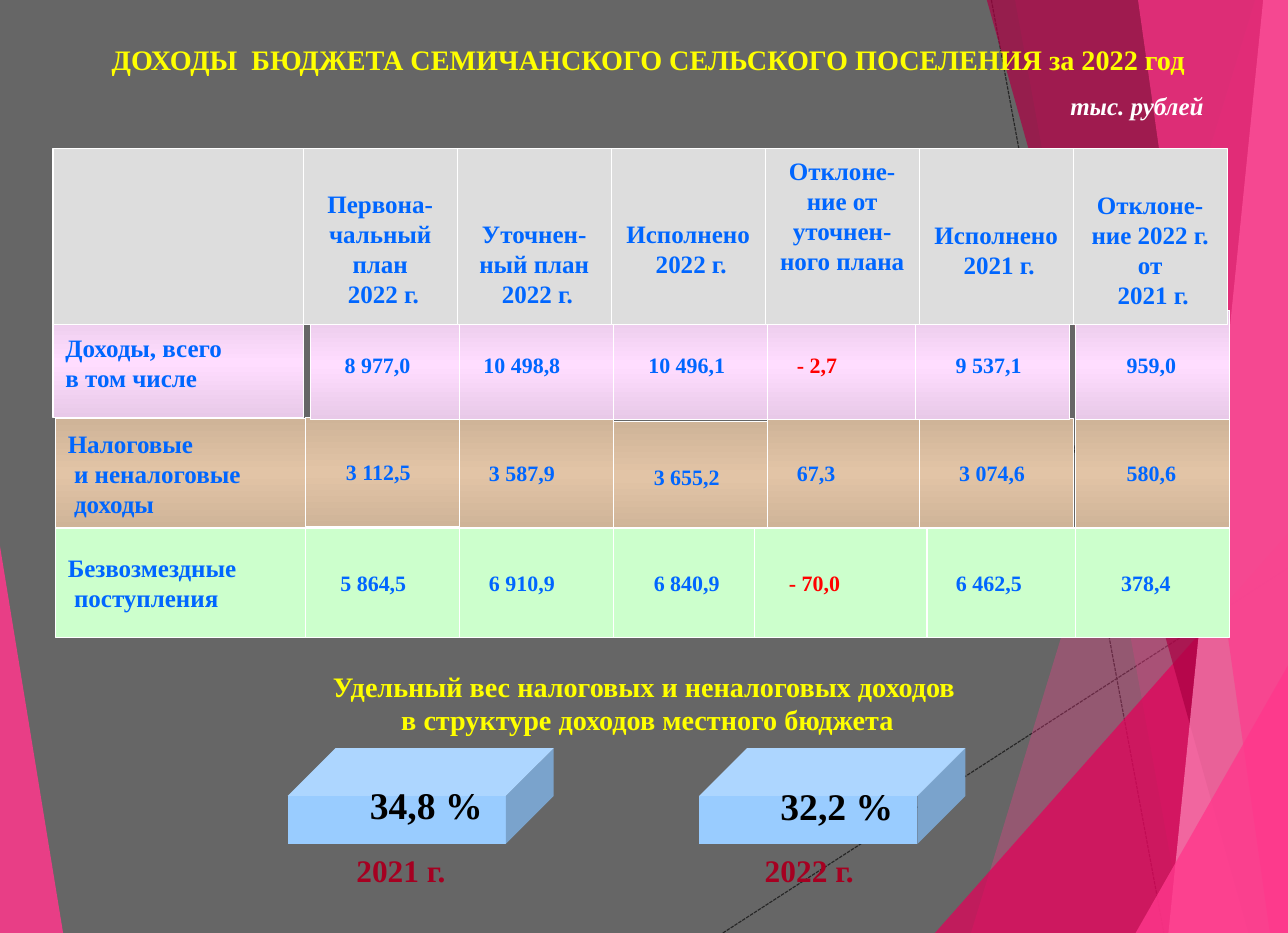
from copy import deepcopy

from pptx import Presentation
from pptx.dml.color import RGBColor
from pptx.enum.dml import MSO_LINE_DASH_STYLE as Dash
from pptx.enum.shapes import MSO_CONNECTOR as Connector, MSO_SHAPE as Shape
from pptx.enum.text import MSO_ANCHOR as Anchor, PP_ALIGN as Align
from pptx.oxml.ns import qn
from pptx.oxml.xmlchemy import OxmlElement
from pptx.util import Pt

rgb = RGBColor.from_string
WIDTH, HEIGHT = 822.24, 595.44
BLUE, RED, YELLOW, WHITE = "0066FF", "FF0000", "FFFF00", "FFFFFF"


def write(box, paragraphs, size, color, align=Align.CENTER, anchor=Anchor.TOP,
          margins=(8, 4.3, 8, 4.3), italic=False, shadow=False):
    """Fill a shape with bold text; "\n" inside a paragraph is a line break."""
    frame = box.text_frame
    frame.word_wrap = True
    frame.vertical_anchor = anchor
    (frame.margin_left, frame.margin_top,
     frame.margin_right, frame.margin_bottom) = [Pt(m) for m in margins]
    for number, text in enumerate(paragraphs):
        para = frame.paragraphs[0] if number == 0 else frame.add_paragraph()
        para.alignment = align
        for row, line in enumerate(text.split("\n")):
            if row:
                para.add_line_break()
            span = para.add_run()
            span.text = line
            font = span.font
            font.name, font.size = "Times New Roman", Pt(size)
            font.bold, font.italic = True, italic
            font.color.rgb = rgb(color)
            if shadow:
                effects = OxmlElement("a:effectLst")
                outer = OxmlElement("a:outerShdw")
                outer.set("dist", "17961")
                outer.set("dir", "2700000")
                tint = OxmlElement("a:srgbClr")
                tint.set("val", "C0C0C0")
                outer.append(tint)
                effects.append(outer)
                span._r.rPr.find(qn("a:solidFill")).addnext(effects)


def add_cell(left, top, width, height, colors):
    """Add a white-edged rectangle with a plain or a three-stop fill."""
    cell = slide.shapes.add_shape(Shape.RECTANGLE, Pt(left), Pt(top), Pt(width), Pt(height))
    cell.shadow.inherit = False
    cell.line.color.rgb = rgb(WHITE)
    cell.line.width = Pt(0.75)
    if len(colors) == 1:
        cell.fill.solid()
        cell.fill.fore_color.rgb = rgb(colors[0])
    else:
        cell.fill.gradient()
        cell.fill.gradient_angle = 90
        stop_list = cell._element.spPr.find(qn("a:gradFill")).find(qn("a:gsLst"))
        stop_list.append(deepcopy(stop_list[0]))
        for stop, color, position in zip(cell.fill.gradient_stops, colors, (0, 0.5, 1)):
            stop.color.rgb = rgb(color)
            stop.position = position
    return cell


deck = Presentation()
deck.slide_width, deck.slide_height = Pt(WIDTH), Pt(HEIGHT)
slide = deck.slides.add_slide(deck.slide_layouts[5])
slide.background.fill.solid()
slide.background.fill.fore_color.rgb = rgb("666666")

# Dashed background lines
for x1, y1, x2, y2 in ((461.5, HEIGHT, WIDTH, 362.5), (632.9, 0, 743, HEIGHT)):
    line = slide.shapes.add_connector(Connector.STRAIGHT, Pt(x1), Pt(y1), Pt(x2), Pt(y2))
    line.line.color.rgb = rgb("262626")
    line.line.width = Pt(0.75)
    line.line.dash_style = Dash.SQUARE_DOT
    line._element.spPr.append(OxmlElement("a:effectLst"))

# Translucent facets: colour, opacity in percent, first two corners, remaining corners
bottom_right, top_right = (WIDTH, HEIGHT), (WIDTH, 0)
facets = [
    ("FF388C", 85, (0, 348.5), (40.3, HEIGHT), [(0, HEIGHT)]),
    ("FF388C", 30, (801.4, 0), (619.9, HEIGHT), [bottom_right, top_right]),
    ("FF388C", 20, (648, 0), (756, HEIGHT), [bottom_right, top_right]),
    ("E40059", 72, (596.9, HEIGHT), (WIDTH, 340.6), [bottom_right]),
    ("AB0043", 70, (630, 0), (797, HEIGHT), [bottom_right, top_right]),
    ("FF88BA", 70, (806.4, 0), (745.9, HEIGHT), [bottom_right, top_right]),
    ("FF388C", 65, (726.5, 0), (810.7, HEIGHT), [bottom_right, top_right]),
    ("FF388C", 80, (725, HEIGHT), (WIDTH, 424.8), [bottom_right]),
]
for color, opacity, start, second, rest in facets:
    outline = slide.shapes.build_freeform(Pt(start[0]), Pt(start[1]))
    outline.add_line_segments([(Pt(x), Pt(y)) for x, y in [second] + rest], close=True)
    facet = outline.convert_to_shape()
    facet.shadow.inherit = False
    facet.line.fill.background()
    facet.fill.solid()
    facet.fill.fore_color.rgb = rgb(color)
    alpha = OxmlElement("a:alpha")
    alpha.set("val", str(opacity * 1000))
    facet._element.spPr.find(qn("a:solidFill"))[0].append(alpha)

# Title, brought in front of the facets
title = slide.shapes.title
title.left, title.top, title.width, title.height = Pt(35.3), Pt(23), Pt(757.4), Pt(30.2)
write(title, ["ДОХОДЫ  БЮДЖЕТА СЕМИЧАНСКОГО СЕЛЬСКОГО ПОСЕЛЕНИЯ за 2022 год"], 18, YELLOW)
slide.shapes._spTree.append(title._element)

# Income rows; each value: text, indent in points, shift right, shift down, extra width
COLUMN, LABEL, ROW = 98.3, 159.8, 69.8
BROWN = ("CFB498", "E2C4A6", "CFB498")
GREEN = ("CCFFCC",)
PINK = ("E8C9E8", "FFDDFF", "E8C9E8")
income_rows = [
    (267.1, BROWN, "Налоговые\n и неналоговые\n доходы", 35.3, 267.1,
     [("3 112,5", 17.5, 0, -0.7, 0), ("3 587,9", 10.5, 0, 0, 0), ("3 655,2", 17.5, 0, 2.2, 0),
      ("67,3", 10.5, 0, 0, 0), ("3 074,6", 17.5, -1.7, 0, 0), ("580,6", 24.5, 0, 0, 0)]),
    (337, GREEN, "Безвозмездные\n поступления", 35.3, 337,
     [("5 864,5", 14, 0, 0, 0), ("6 910,9", 10.5, 0, 0, 0), ("6 840,9", 17.5, 0, 0, 0),
      ("- 70,0", 14, -8.5, 0, 11.8), ("6 462,5", 10.5, 3.3, 0, 0), ("378,4", 21, 0, 0, 0)]),
    (198, PINK, "Доходы, всего\nв том числе", 33.8, 196.6,
     [("8 977,0", 14, 2.7, 0, 0), ("10 498,8", 7, 0, 0, 0), ("10 496,1", 14, 0, 0, 0),
      ("- 2,7", 10.5, 0, 0, 0), ("9 537,1", 17.5, -3.9, 0, 0), ("959,0", 24.5, 0, 0, 0)]),
]
for top, colors, label, label_left, label_top, values in income_rows:
    for column, (value, indent, right, down, extra) in enumerate(values):
        cell = add_cell(195.3 + COLUMN * column + right, top + down, COLUMN + extra, ROW, colors)
        write(cell, [value], 14, RED if value.startswith("-") else BLUE, Align.LEFT,
              Anchor.MIDDLE, (8 + indent, 4.3, 0, 4.3))
    cell = add_cell(label_left, label_top, LABEL, ROW, colors)
    write(cell, [label], 16, BLUE, Align.LEFT, Anchor.MIDDLE)

# Header row: paragraphs and their distance from the top
headers = [
    (["Первона-чальный план", " 2022 г."], 25.2),
    (["Уточнен-ный план", " 2022 г."], 44.6),
    (["Исполнено", " 2022 г."], 44.6),
    (["Отклоне-ние от уточнен-ного плана"], 4.3),
    (["Исполнено", " 2021 г."], 45.3),
    (["Отклоне-ние 2022 г. от", " 2021 г."], 25.9),
]
for column, (paragraphs, inset) in enumerate(headers):
    cell = add_cell(193.6 + COLUMN * column, 95, COLUMN, 112.3, ("DDDDDD",))
    write(cell, paragraphs, 16, BLUE, margins=(8, inset, 8, 0))
add_cell(33.8, 95, LABEL, 112.3, ("DDDDDD",))

# Share blocks
for left, share, share_left, share_top, year, year_left in (
        (183.6, "34,8 %", 213.8, 494.6, "2021 г.", 187.9),
        (446.4, "32,2 %", 475.9, 495.4, "2022 г.", 448.6)):
    cube = slide.shapes.add_shape(Shape.CUBE, Pt(left), Pt(477.4), Pt(169.9), Pt(61.2))
    cube.adjustments[0] = 0.5
    cube.shadow.inherit = False
    cube.fill.solid()
    cube.fill.fore_color.rgb = rgb("99CCFF")
    cube.line.fill.background()
    box = slide.shapes.add_textbox(Pt(share_left), Pt(share_top), Pt(116.6), Pt(37.4))
    write(box, [share], 24, "000000", shadow=True)
    box = slide.shapes.add_textbox(Pt(year_left), Pt(538.6), Pt(136.1), Pt(32.4))
    write(box, [year], 20, "A50021", shadow=True)

# Captions
box = slide.shapes.add_textbox(Pt(0), Pt(422.6), Pt(WIDTH), Pt(51.8))
write(box, ["Удельный вес налоговых и неналоговых доходов",
            " в структуре доходов местного бюджета"], 18, YELLOW)
box = slide.shapes.add_textbox(Pt(683.3), Pt(57.6), Pt(115.2), Pt(19.4))
write(box, ["тыс. рублей"], 16, WHITE, Align.LEFT, margins=(0, 0, 0, 0), italic=True)

deck.save("out.pptx")
